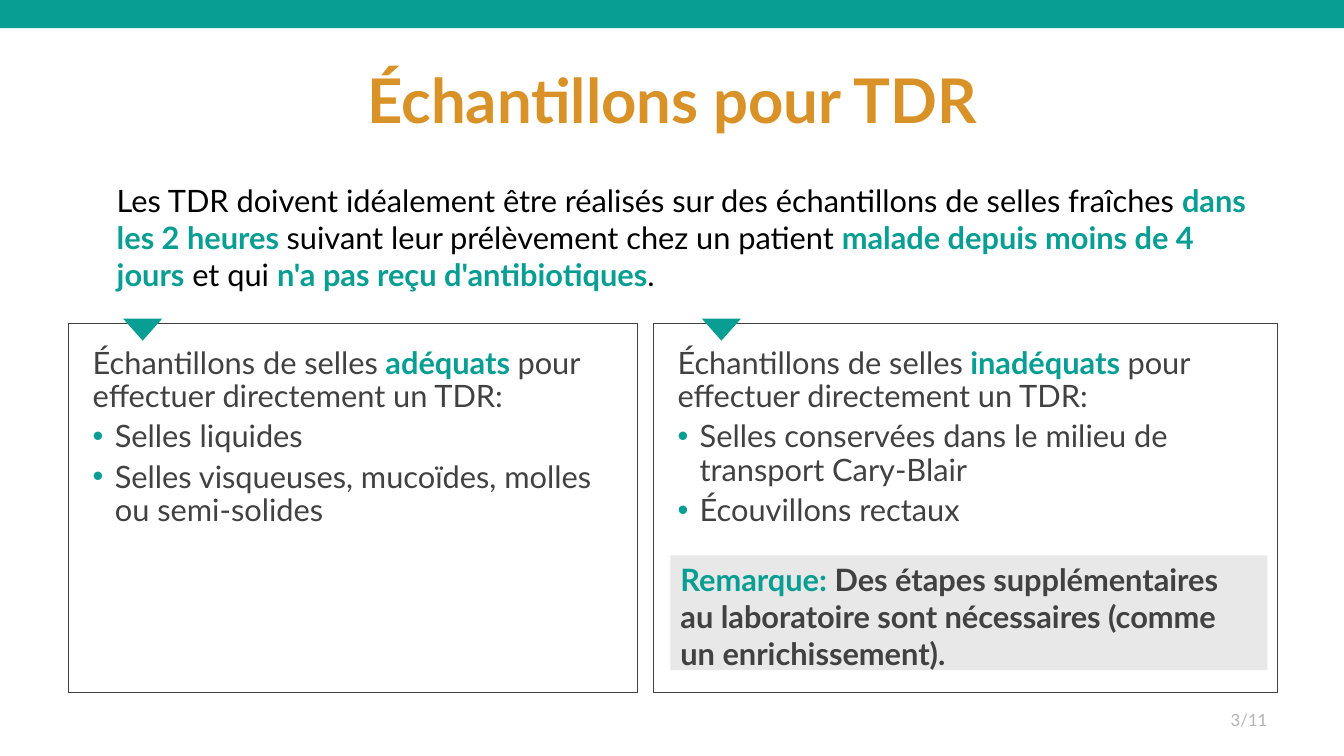
"""Build the slide on stool samples for rapid diagnostic tests."""
from lxml.etree import SubElement
from pptx import Presentation
from pptx.dml.color import RGBColor
from pptx.enum.shapes import MSO_SHAPE as Shape
from pptx.enum.text import MSO_ANCHOR as Anchor, PP_ALIGN as Align
from pptx.oxml.ns import qn
from pptx.util import Inches, Pt

COLORS = {"teal": "099E93", "gold": "D99228", "gray": "414141",
          "pale": "E8E8E8", "black": "000000", "number": "B3B3B3"}

deck = Presentation()
deck.slide_width, deck.slide_height = Inches(13.33), Inches(7.5)
page = deck.slides.add_slide(deck.slide_layouts[5])


def add_block(kind, left, top, width, height, fill=None, line=None):
    """Add a preset shape with flat fill and optional thin outline."""
    block = page.shapes.add_shape(kind, Inches(left), Inches(top), Inches(width), Inches(height))
    block.shadow.inherit = False
    if fill:
        block.fill.solid()
        block.fill.fore_color.rgb = RGBColor.from_string(COLORS[fill])
    else:
        block.fill.background()
    if line:
        block.line.color.rgb = RGBColor.from_string(COLORS[line])
        block.line.width = Pt(0.75)
    else:
        block.line.fill.background()
    return block


def write(para, runs, size=22, align=Align.LEFT, spacing=None):
    """Fill a paragraph with (text, color, bold) runs."""
    para.alignment = align
    if spacing:
        para.line_spacing = spacing
    for text, color, bold in runs:
        span = para.add_run()
        span.text = text
        span.font.name = "Lato"
        span.font.size = Pt(size)
        span.font.bold = bold
        span.font.color.rgb = RGBColor.from_string(COLORS[color])


add_block(Shape.RECTANGLE, 0, 0, 13.33, 0.28, fill="teal")

title = page.shapes.title
title.left, title.top = Inches(0.92), Inches(0.3)
title.width, title.height = Inches(11.5), Inches(1.45)
title.text_frame.vertical_anchor = Anchor.MIDDLE
write(title.text_frame.paragraphs[0], [("Échantillons pour TDR", "gold", True)],
      44, Align.CENTER, 0.9)

panels = [
    (0.68, 5.64, 1.22, " adéquats ",
     ["Selles liquides", "Selles visqueuses, mucoïdes, molles ou semi-solides"]),
    (6.48, 6.19, 6.96, " inadéquats ",
     ["Selles conservées dans le milieu de transport Cary-Blair", "Écouvillons rectaux"]),
]
for left, width, marker_left, quality, items in panels:
    panel = add_block(Shape.RECTANGLE, left, 3.21, width, 3.66, line="gray")
    frame = panel.text_frame
    frame.word_wrap = True
    frame.vertical_anchor = Anchor.TOP
    frame.margin_left = frame.margin_right = Inches(0.24)
    frame.margin_top = frame.margin_bottom = Inches(0.24)
    write(frame.paragraphs[0], [
        ("Échantillons de selles", "gray", False),
        (quality, "teal", True),
        ("pour effectuer directement un TDR:", "gray", False),
    ], spacing=0.9)
    for item in items:
        para = frame.add_paragraph()
        para.space_before = Pt(5)
        properties = para._p.get_or_add_pPr()
        properties.set("marL", str(Inches(0.22)))
        properties.set("indent", str(-Inches(0.22)))
        bullet_color = SubElement(properties, qn("a:buClr"))
        SubElement(bullet_color, qn("a:srgbClr"), val=COLORS["teal"])
        SubElement(properties, qn("a:buFont"), typeface="Arial")
        SubElement(properties, qn("a:buChar"), char="•")
        write(para, [(item, "gray", False)], spacing=0.9)
    marker = add_block(Shape.ISOSCELES_TRIANGLE, marker_left, 3.16, 0.39, 0.22, fill="teal")
    marker.rotation = 180

remark = add_block(Shape.RECTANGLE, 6.65, 5.51, 5.92, 1.14, fill="pale")
remark.text_frame.word_wrap = True
remark.text_frame.vertical_anchor = Anchor.TOP
write(remark.text_frame.paragraphs[0], [
    ("Remarque: ", "teal", True),
    ("Des étapes supplémentaires au laboratoire sont nécessaires "
     "(comme un enrichissement).", "gray", True),
])

intro = page.shapes.add_textbox(Inches(1.06), Inches(1.75), Inches(11.5), Inches(1.21))
intro.text_frame.word_wrap = True
write(intro.text_frame.paragraphs[0], [
    ("Les TDR doivent idéalement être réalisés sur des échantillons de selles fraîches ",
     "black", False),
    ("dans les 2 heures ", "teal", True),
    ("suivant leur prélèvement chez un patient ", "black", False),
    ("malade depuis moins de 4 jours", "teal", True),
    (" et qui ", "black", False),
    ("n'a pas reçu d'antibiotiques", "teal", True),
    (".", "black", False),
])

number = page.shapes.add_textbox(Inches(9.67), Inches(6.95), Inches(3), Inches(0.4))
number.text_frame.word_wrap = True
number.text_frame.vertical_anchor = Anchor.MIDDLE
write(number.text_frame.paragraphs[0], [("3/11", "number", False)], 12, Align.RIGHT, 0.9)

deck.save("out.pptx")
